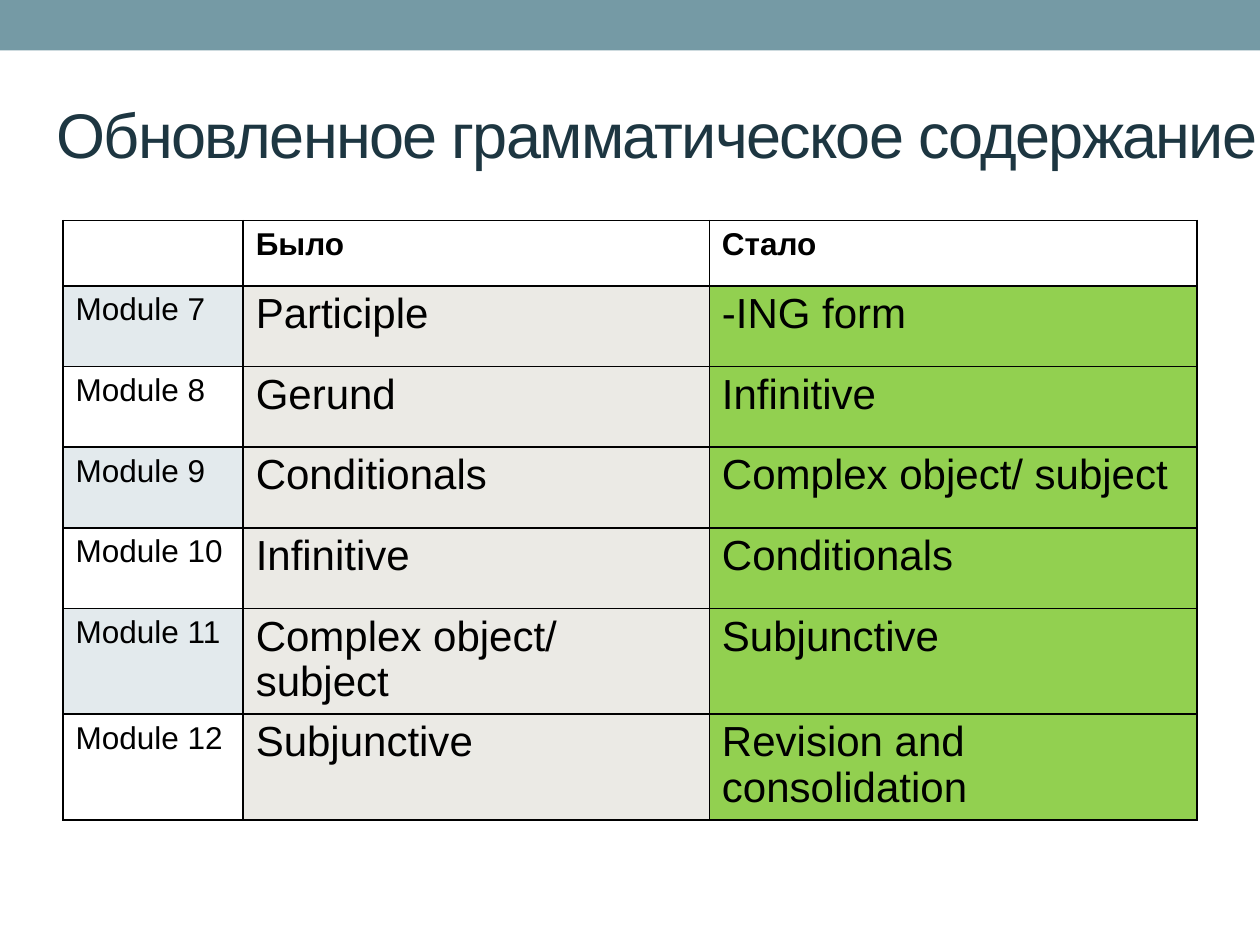
from pptx import Presentation
from pptx.dml.color import RGBColor
from pptx.enum.shapes import MSO_SHAPE
from pptx.enum.text import MSO_ANCHOR, PP_ALIGN
from pptx.oxml import parse_xml
from pptx.oxml.ns import nsdecls, qn
from pptx.util import Inches, Pt
from lxml.etree import SubElement

INK, BAND, HEADING = "000000", "759AA5", "1D3641"
BEFORE, AFTER = "EBEAE5", "92D050"


def paint(target, color, opacity=100):
    target.solid()
    target.fore_color.rgb = RGBColor.from_string(color)
    if opacity < 100:
        SubElement(target._xPr.find(".//" + qn("a:srgbClr")), qn("a:alpha"),
                   val=str(opacity * 1000))


def format_text(frame, size, color, bold=False):
    for paragraph in frame.paragraphs:
        look = {"name": "Arial", "size": Pt(size), "bold": bold}
        for key, value in look.items():
            setattr(paragraph.font, key, value)
        paint(paragraph.font.fill, color)


prs = Presentation()
prs.slide_width, prs.slide_height = Inches(10), Inches(7.5)
slide = prs.slides.add_slide(prs.slide_layouts[5])

# Top band
band = slide.shapes.add_shape(MSO_SHAPE.RECTANGLE, 0, 0, prs.slide_width, Inches(0.4))
band.shadow.inherit = False
band.line.fill.background()
paint(band.fill, BAND)

# Heading
heading = slide.shapes.title
place = {"left": 0.35, "top": 0.52, "width": 9.92, "height": 1.08}
for key, value in place.items():
    setattr(heading, key, Inches(value))
heading.text_frame.text = "Обновленное грамматическое содержание"
heading.text_frame.vertical_anchor = MSO_ANCHOR.MIDDLE
heading.text_frame.paragraphs[0].alignment = PP_ALIGN.LEFT
format_text(heading.text_frame, 36, HEADING)
heading.text_frame.paragraphs[0].runs[0].font._element.set("spc", "-100")

# Grammar by module, before and after
grammar = [
    ("", "Было", "Стало"),
    ("Module 7", "Participle", "-ING form"),
    ("Module 8", "Gerund", "Infinitive"),
    ("Module 9", "Conditionals", "Complex object/ subject"),
    ("Module 10", "Infinitive", "Conditionals"),
    ("Module 11", "Complex object/ subject", "Subjunctive"),
    ("Module 12", "Subjunctive", "Revision and consolidation"),
]
column_widths = [1.43, 3.7, 3.87]
row_heights = [0.52] + [0.64] * 4 + [0.84] * 2

table = slide.shapes.add_table(
    len(grammar), len(column_widths), Inches(0.5), Inches(1.75),
    Inches(sum(column_widths)), Inches(sum(row_heights))).table
table.first_row = table.horz_banding = False
for column, width in zip(table.columns, column_widths):
    column.width = Inches(width)
for row, height in zip(table.rows, row_heights):
    row.height = Inches(height)

for r, entries in enumerate(grammar):
    for c, entry in enumerate(entries):
        cell = table.cell(r, c)
        cell.text = entry
        is_topic = r > 0 and c > 0
        format_text(cell.text_frame, 24 if is_topic else 18, INK, bold=r == 0)
        if is_topic:
            cell.text_frame.paragraphs[0].line_spacing = 0.97
            paint(cell.fill, BEFORE if c == 1 else AFTER)
        elif r % 2:
            paint(cell.fill, BAND, opacity=20)
        else:
            cell.fill.background()
        for position, side in enumerate(("lnL", "lnR", "lnT", "lnB")):
            cell._tc.get_or_add_tcPr().insert(position, parse_xml(
                f'<a:{side} {nsdecls("a")} w="{Pt(1)}"><a:solidFill>'
                f'<a:srgbClr val="{INK}"/></a:solidFill></a:{side}>'))

prs.save("out.pptx")
